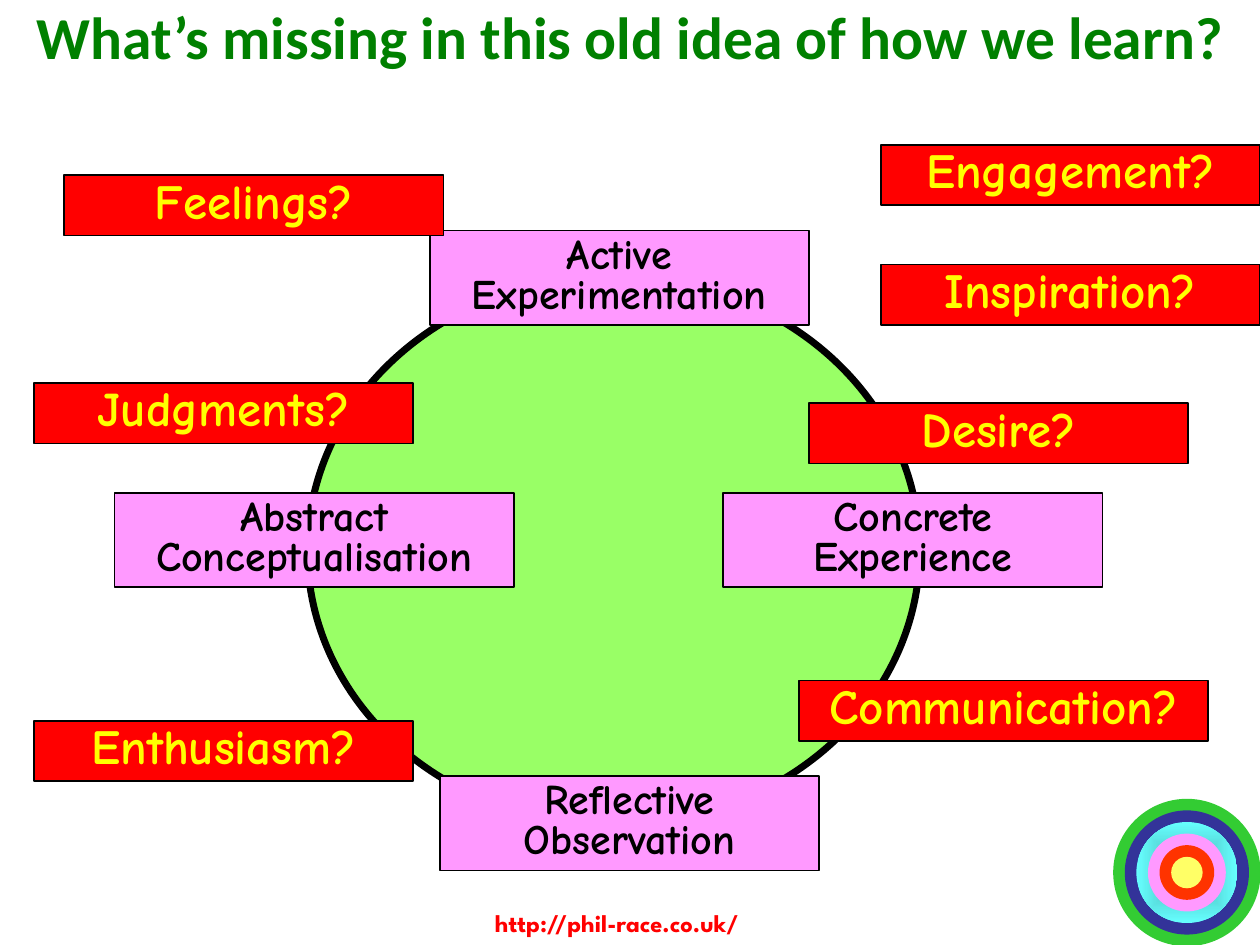
"""Build a slide that questions a four-stage learning cycle."""
import dataclasses

import lxml.etree
import pptx
import pptx.dml.color
import pptx.enum.shapes
import pptx.enum.text
import pptx.oxml.ns
import pptx.util

RGBColor = pptx.dml.color.RGBColor
WHITE = RGBColor(0xFF, 0xFF, 0xFF)
BLACK = RGBColor(0, 0, 0)
TITLE_GREEN = RGBColor(0, 0x80, 0)
CYCLE_GREEN = RGBColor(0x99, 0xFF, 0x66)
PINK = RGBColor(0xFF, 0x99, 0xFF)
RED = RGBColor(0xFF, 0, 0)
YELLOW = RGBColor(0xFF, 0xFF, 0)
TEAL = RGBColor(0x47, 0xB2, 0xB2)
CYAN = RGBColor(0x66, 0xFF, 0xFF)
RING_GREEN = RGBColor(0x33, 0xCC, 0x33)
INDIGO = RGBColor(0x33, 0x33, 0x99)
ORANGE_RED = RGBColor(0xFF, 0x33, 0)
PALE_YELLOW = RGBColor(0xFF, 0xFF, 0x66)

WIDTH, HEIGHT = pptx.util.Inches(10), pptx.util.Inches(7.5)
COLUMN, ROW = WIDTH / 100, HEIGHT / 75
OVAL = pptx.enum.shapes.MSO_SHAPE.OVAL
RECTANGLE = pptx.enum.shapes.MSO_SHAPE.RECTANGLE
CENTER = pptx.enum.text.PP_ALIGN.CENTER


@dataclasses.dataclass(frozen=True)
class LabelStyle:
    fill: RGBColor
    color: RGBColor
    size: int
    height: float


@dataclasses.dataclass(frozen=True)
class Label:
    text: str
    left: float
    top: float
    style: LabelStyle
    width: float = 30.1


STAGE = LabelStyle(PINK, BLACK, 24, 7.5)
MISSING = LabelStyle(RED, YELLOW, 28, 4.8)
LABELS = (
    Label("Active\nExperimentation", 34.1, 18.3, STAGE),
    Label("Concrete\nExperience", 57.4, 39.1, STAGE),
    Label("Reflective\nObservation", 34.9, 61.6, STAGE),
    Label("Abstract\nConceptualisation", 9.1, 39.1, STAGE, 31.7),
    Label("Feelings?", 5.1, 13.9, MISSING),
    Label("Inspiration?", 69.9, 21, MISSING),
    Label("Enthusiasm?", 2.7, 57.2, MISSING),
    Label("Communication?", 63.4, 54, MISSING, 32.5),
    Label("Judgments?", 2.7, 30.4, MISSING),
    Label("Desire?", 64.2, 32, MISSING),
    Label("Engagement?", 69.9, 11.5, MISSING),
)
RING_COLORS = (RING_GREEN, INDIGO, CYAN, PINK, ORANGE_RED, PALE_YELLOW)
RING_CENTER = (94.2, 69.25)
RING_DIAMETER, RING_STEP = 11.7, 1.84


def place(left: float, top: float, width: float, height: float) -> tuple[int, ...]:
    """Turn grid columns and rows into slide lengths."""
    return round(left * COLUMN), round(top * ROW), round(width * COLUMN), round(height * ROW)


def write_text(frame, text: str, *, font: str, size: int, color: RGBColor,
               alignment=None, spacing: float | None = None) -> None:
    """Fill a text frame with bold paragraphs, one for each line."""
    frame.word_wrap = True
    for index, line in enumerate(text.split("\n")):
        paragraph = frame.add_paragraph() if index else frame.paragraphs[0]
        paragraph.alignment = alignment
        paragraph.line_spacing = spacing
        run = paragraph.add_run()
        run.text = line
        run.font.name = font
        run.font.size = pptx.util.Pt(size)
        run.font.bold = True
        run.font.color.rgb = color


def add_figure(slide, kind, area: tuple[int, ...], fill: RGBColor, line_width: float = 0):
    """Add a filled shape with an optional black outline."""
    shape = slide.shapes.add_shape(kind, *area)
    shape.shadow.inherit = False
    shape.fill.solid()
    shape.fill.fore_color.rgb = fill
    if line_width:
        shape.line.color.rgb = BLACK
        shape.line.width = pptx.util.Pt(line_width)
    else:
        shape.line.fill.background()
    return shape


def shade_from_center(shape, inner: RGBColor, outer: RGBColor) -> None:
    """Give a shape a gradient that spreads from its centre."""
    shape.fill.gradient()
    for stop, color in zip(shape.fill.gradient_stops, (inner, outer)):
        stop.color.rgb = color
    qualify = pptx.oxml.ns.qn
    gradient = shape._element.spPr.find(qualify("a:gradFill"))
    gradient.remove(gradient.find(qualify("a:lin")))
    spread = lxml.etree.SubElement(gradient, qualify("a:path"), {"path": "shape"})
    lxml.etree.SubElement(spread, qualify("a:fillToRect"), dict.fromkeys("ltrb", "50000"))


def add_rings(slide) -> None:
    """Draw the concentric rings in the lower right corner."""
    center_x, center_y = RING_CENTER
    for index, color in enumerate(RING_COLORS):
        diameter = RING_DIAMETER - index * RING_STEP
        area = place(center_x - diameter / 2, center_y - diameter / 2, diameter, diameter)
        ring = add_figure(slide, OVAL, area, color)
        if color == CYAN:
            shade_from_center(ring, TEAL, CYAN)


def add_label(slide, label: Label) -> None:
    """Draw a bordered label with centred text."""
    style = label.style
    area = place(label.left, label.top, label.width, style.height)
    shape = add_figure(slide, RECTANGLE, area, style.fill, 1)
    shape.text_frame.vertical_anchor = pptx.enum.text.MSO_ANCHOR.TOP
    shape.text_frame.auto_size = pptx.enum.text.MSO_AUTO_SIZE.SHAPE_TO_FIT_TEXT
    write_text(shape.text_frame, label.text, font="Comic Neue", size=style.size,
               color=style.color, alignment=CENTER, spacing=0.8)


def main() -> None:
    """Build and save the presentation."""
    presentation = pptx.Presentation()
    presentation.slide_width, presentation.slide_height = WIDTH, HEIGHT
    slide = presentation.slides.add_slide(presentation.slide_layouts[5])
    slide.background.fill.solid()
    slide.background.fill.fore_color.rgb = WHITE

    title = slide.shapes.title
    title.left, title.top, title.width, title.height = place(0, -2.7, 100, 11.9)
    title.text_frame.vertical_anchor = pptx.enum.text.MSO_ANCHOR.MIDDLE
    title.text_frame.auto_size = pptx.enum.text.MSO_AUTO_SIZE.NONE
    write_text(title.text_frame, "What’s missing in this old idea of how we learn?",
               font="Calibri", size=34, color=TITLE_GREEN, alignment=CENTER, spacing=0.85)

    add_rings(slide)
    address = slide.shapes.add_textbox(*place(38.3, 71.6, 28.9, 3.4))
    write_text(address.text_frame, "http://phil-race.co.uk/",
               font="League Spartan", size=14, color=RED)
    add_figure(slide, OVAL, place(24.4, 21.9, 48.6, 43.6), CYCLE_GREEN, 4)
    for label in LABELS:
        add_label(slide, label)
    presentation.save("out.pptx")


if __name__ == "__main__":
    main()
